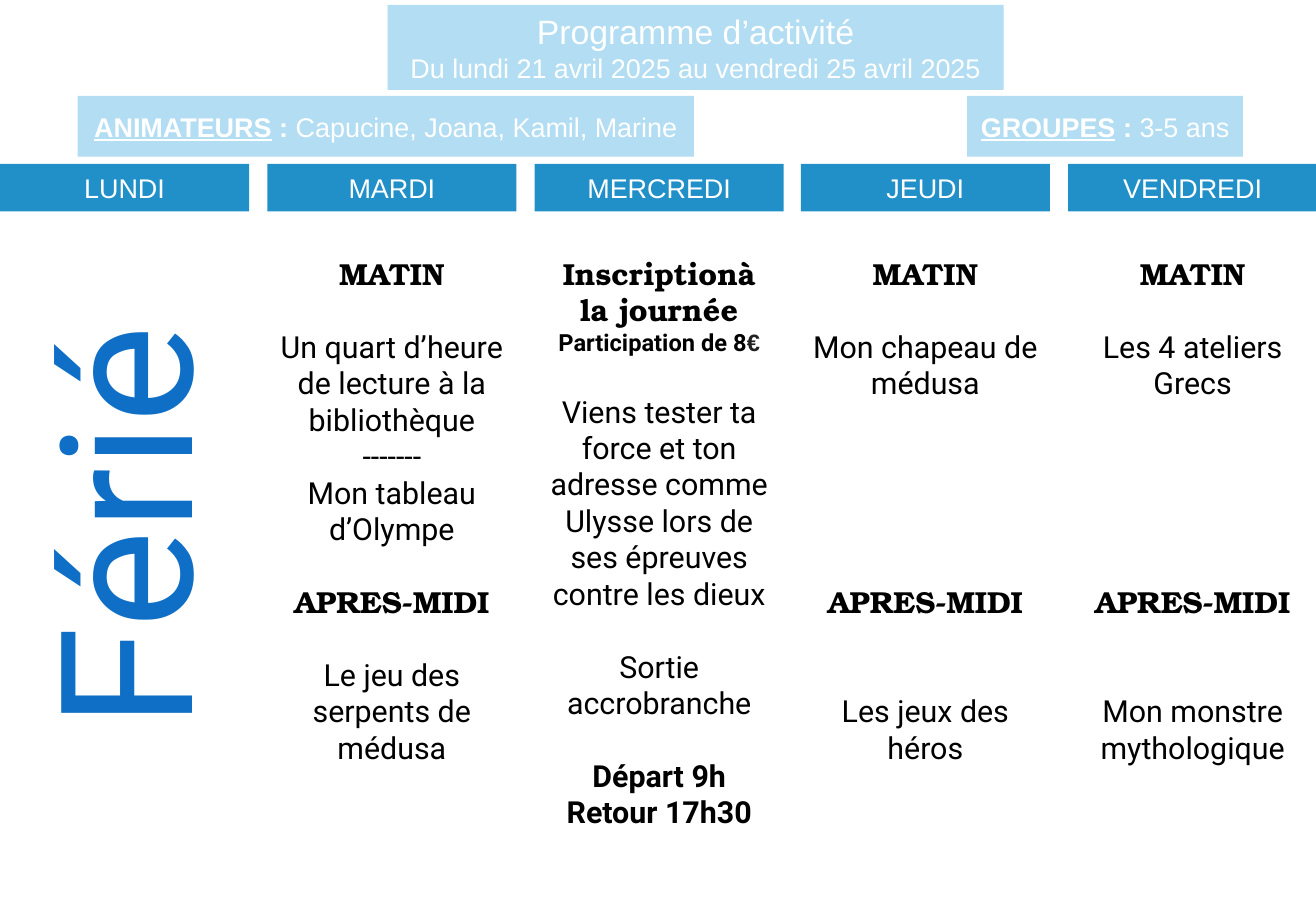
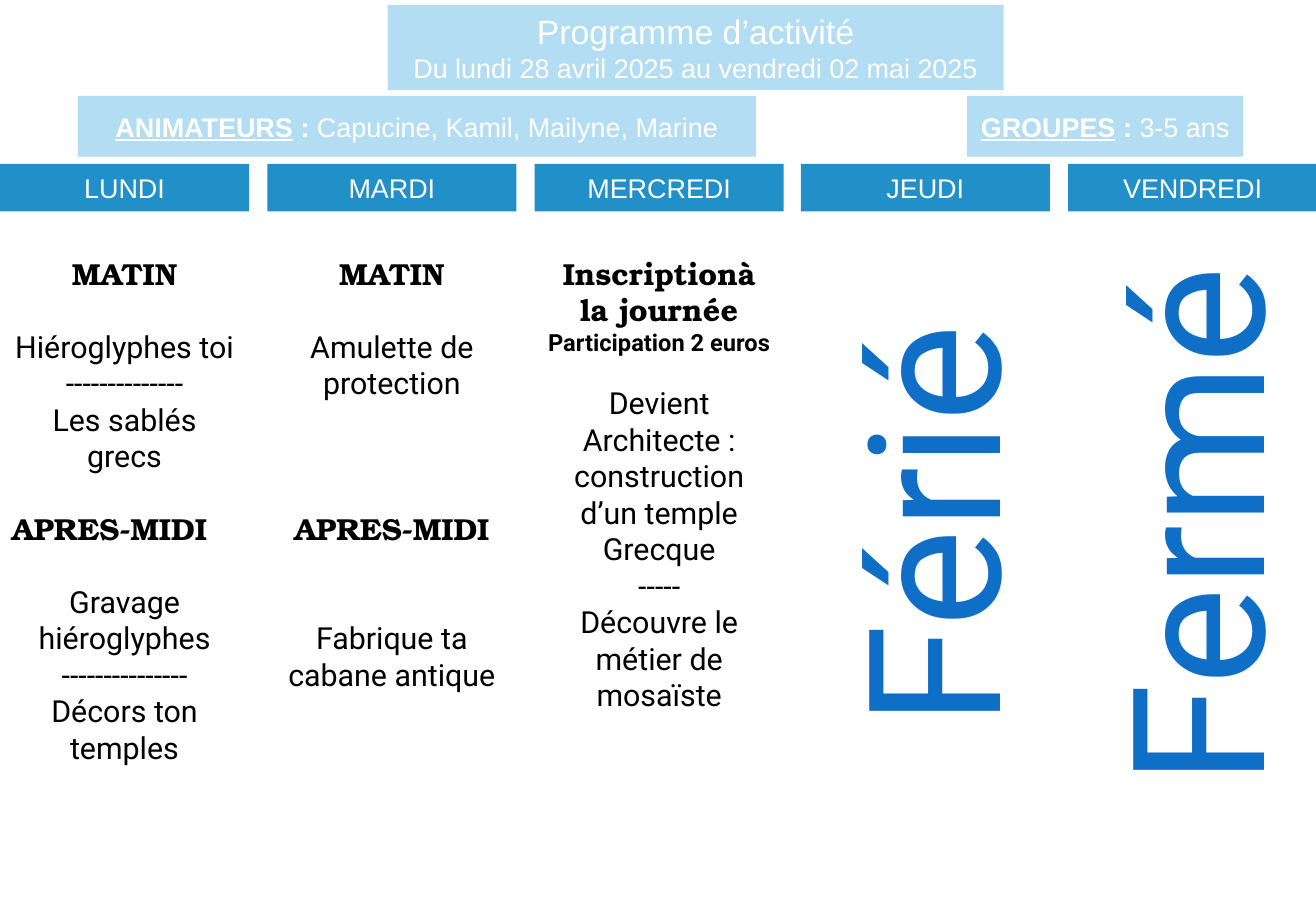
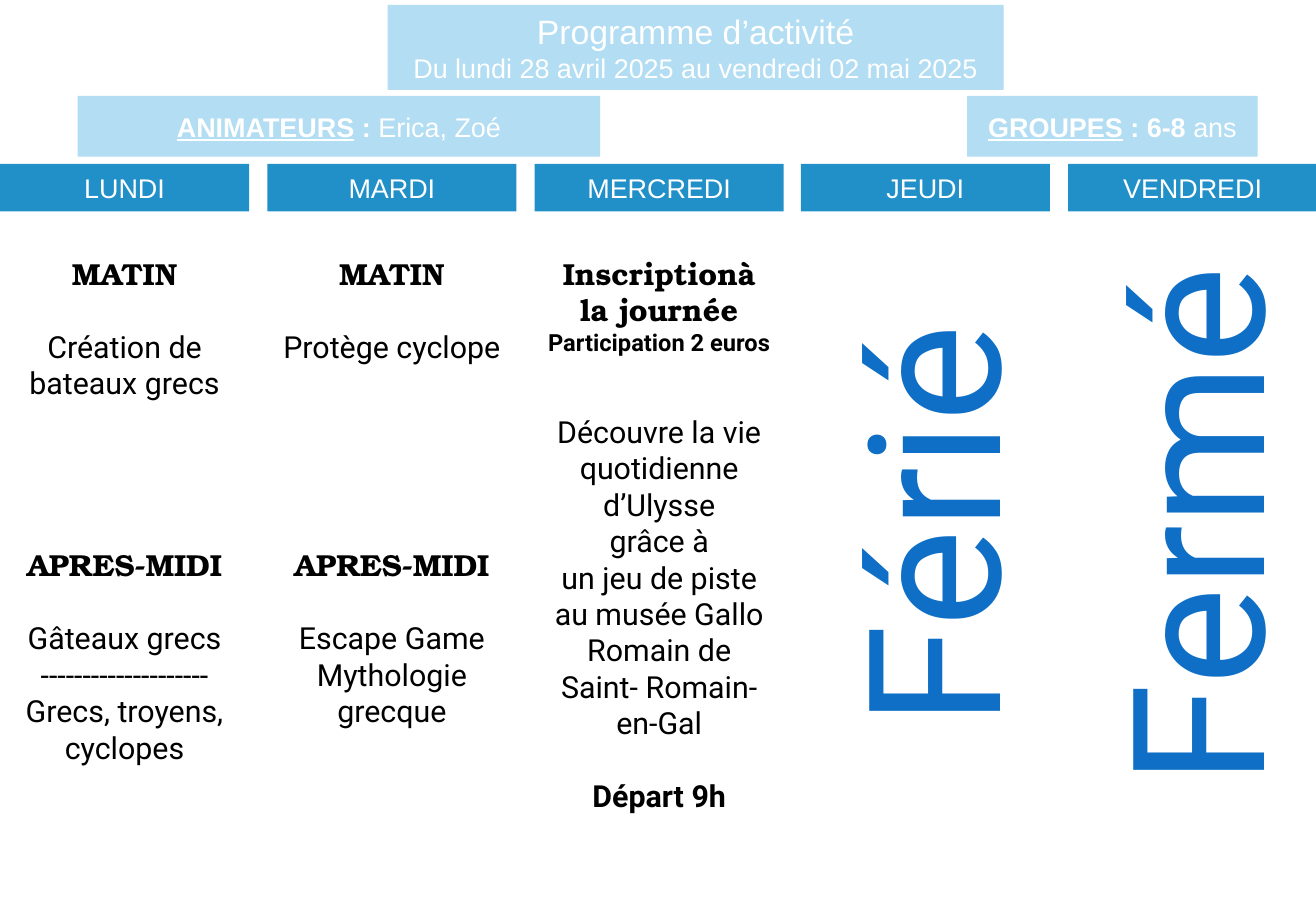
from pptx import Presentation
from pptx.dml.color import RGBColor
from pptx.enum.shapes import MSO_SHAPE
from pptx.enum.text import MSO_ANCHOR, PP_ALIGN
from pptx.util import Pt

PX = 9144  # 100 px to the inch
RECT = MSO_SHAPE.RECTANGLE
TOP, MIDDLE = MSO_ANCHOR.TOP, MSO_ANCHOR.MIDDLE
LEFT, CENTER = PP_ALIGN.LEFT, PP_ALIGN.CENTER

COLORS = {"band": "B2DDF2", "day": "2190C8", "sign": "0F6FC6",
          "white": "FFFFFF", "black": "000000", "euro": "202122"}
# font, size, colour, bold
STYLES = {
    "title": ("Arial", 20, "white", False),
    "band": ("Arial", 16, "white", False),
    "head": ("TeX Gyre Bonum", 18, "black", True),
    "text": ("Roboto", 18, "black", False),
    "note": ("Roboto", 14, "black", True),
    "time": ("Roboto", 18, "black", True),
    "sign": ("Roboto", 109, "sign", False),
}
DAYS = ["LUNDI", "MARDI", "MERCREDI", "JEUDI", "VENDREDI"]
DAY_W, LAST = 205, 879
LINE, SMALL = 21.6, 16.8  # blank line heights in points


def color(name):
    return RGBColor.from_string(COLORS[name])


def place(box):
    return [n * PX for n in box]


def style(para, kind, align=CENTER):
    name, size, ink, bold = STYLES[kind]
    para.alignment = align
    font = para.font
    font.name, font.size, font.bold = name, Pt(size), bold
    font.color.rgb = color(ink)


def frame(shape, anchor):
    area = shape.text_frame
    area.word_wrap = True
    area.vertical_anchor = anchor
    return area


def write(area, rows):
    """Fill a frame with rows of (kind, text, points before, alignment)."""
    for i, (kind, text, gap, align) in enumerate(rows):
        para = area.add_paragraph() if i else area.paragraphs[0]
        para.add_run().text = text
        style(para, kind, align)
        if gap:
            para.space_before = Pt(gap)


def band(slide, box, fill):
    shape = slide.shapes.add_shape(RECT, *place(box))
    shape.shadow.inherit = False
    shape.fill.solid()
    shape.fill.fore_color.rgb = color(fill)
    shape.line.fill.background()
    return frame(shape, MIDDLE)


def label(slide, left, wide, name, mark, rest):
    """Band with an underlined name, a bold mark and plain text."""
    para = band(slide, (left, 79, wide, 50), "band").paragraphs[0]
    style(para, "band")
    for text, bold, under in ((name, True, True), (mark, True, False),
                              (rest, False, False)):
        run = para.add_run()
        run.text = text
        run.font.bold, run.font.underline = bold, under


def day_left(day):
    return round(day * LAST / (len(DAYS) - 1))


def header(slide, dates, wide, staff, group=("3-5 ans", " : ", 227)):
    for i, name in enumerate(DAYS):
        area = band(slide, (day_left(i), 135, DAY_W, 39), "day")
        write(area, [row("band", name)])
    write(band(slide, (319, 4, 507, 70), "band"),
          [row("title", "Programme d’activité"), row("band", dates)])
    label(slide, 64, wide, "ANIMATEURS", " : ", staff)
    ages, mark, size = group
    label(slide, 796, size, "GROUPES", mark, ages)


def row(kind, text, gap=0, align=CENTER):
    return kind, text, gap, align


def block(kind, texts, gap=0):
    """Rows of one kind, with a gap before the first."""
    return [row(kind, text, 0 if i else gap) for i, text in enumerate(texts)]


def halves(am, gap, pm, pause=1, align=CENTER):
    """Morning and afternoon; gap and pause count blank lines."""
    return [row("head", "MATIN"), *block("text", am, LINE),
            row("head", "APRES-MIDI", gap * LINE, align),
            *block("text", pm, pause * LINE)]


def trip(fee):
    return [row("head", "Inscriptionà la journée"), row("note", fee)]


def column(slide, day, rows):
    box = slide.shapes.add_textbox(*place((day_left(day), 175, DAY_W, 517)))
    area = frame(box, TOP)
    area.margin_top = 35 * PX
    write(area, rows)
    return area


def sign(slide, word, box, anchor=MIDDLE):
    """Large word that reads upwards."""
    shape = slide.shapes.add_textbox(*place(box))
    shape.rotation = 270
    write(frame(shape, anchor), [row("sign", word)])


def closed(slide):
    for word, left in (("Férié", 505), ("Fermé", 722)):
        sign(slide, word, (left, 330, 516, 206))


def first(slide):
    header(slide, "Du lundi 21 avril 2025 au vendredi 25 avril 2025", 507,
           "Capucine, Joana, Kamil, Marine")
    sign(slide, "Férié", (-152, 333, 510, 202), TOP)
    column(slide, 1, halves(
        ["Un quart d’heure de lecture à la bibliothèque", "-------",
         "Mon tableau d’Olympe"], 1, ["Le jeu des serpents de médusa"]))
    area = column(slide, 2, [
        *trip("Participation de 8"),
        row("text", "Viens tester ta force et ton adresse comme Ulysse "
            "lors de ses épreuves contre les dieux", LINE),
        row("text", "Sortie accrobranche", LINE),
        *block("time", ["Départ 9h", "Retour 17h30"], LINE)])
    euro = area.paragraphs[1].add_run()
    euro.text = "€"
    euro.font.name = "Arial"
    euro.font.color.rgb = color("euro")
    column(slide, 3, halves(["Mon chapeau de médusa"], 5,
                            ["Les jeux des héros"], 2))
    column(slide, 4, halves(["Les 4 ateliers Grecs"], 5,
                            ["Mon monstre mythologique"], 2))


def second(slide):
    header(slide, "Du lundi 28 avril 2025 au vendredi 02 mai 2025", 558,
           "Capucine, Kamil, Mailyne, Marine")
    column(slide, 0, halves(
        ["Hiéroglyphes toi", "--------------", "Les sablés grecs"], 1,
        ["Gravage hiéroglyphes", "---------------", "Décors ton temples"],
        align=LEFT))
    column(slide, 1, halves(["Amulette de protection"], 3,
                            ["Fabrique ta cabane antique"], 2))
    column(slide, 2, trip("Participation 2 euros") + block(
        "text", ["Devient", "Architecte :", "construction", "d’un temple",
                 "Grecque", "-----", "Découvre le métier de mosaïste"],
        SMALL))
    closed(slide)


def third(slide):
    header(slide, "Du lundi 28 avril 2025 au vendredi 02 mai 2025", 430,
           "Erica, Zoé", (" ans", " : 6-8", 239))
    column(slide, 0, halves(
        ["Création de bateaux grecs"], 4,
        ["Gâteaux grecs", "--------------------",
         "Grecs, troyens, cyclopes"]))
    column(slide, 1, halves(["Protège cyclope"], 5,
                            ["Escape Game Mythologie grecque"]))
    column(slide, 2, [
        *trip("Participation 2 euros"),
        *block("text", ["Découvre la vie quotidienne d’Ulysse", "grâce à",
                        "un jeu de piste au musée Gallo Romain de "
                        "Saint- Romain- en-Gal"], 2 * SMALL),
        row("time", "Départ 9h", LINE)])
    closed(slide)


def main():
    deck = Presentation()
    deck.slide_width, deck.slide_height = 1083 * PX, 750 * PX
    for build in (first, second, third):
        build(deck.slides.add_slide(deck.slide_layouts[6]))
    deck.save("out.pptx")


if __name__ == "__main__":
    main()
